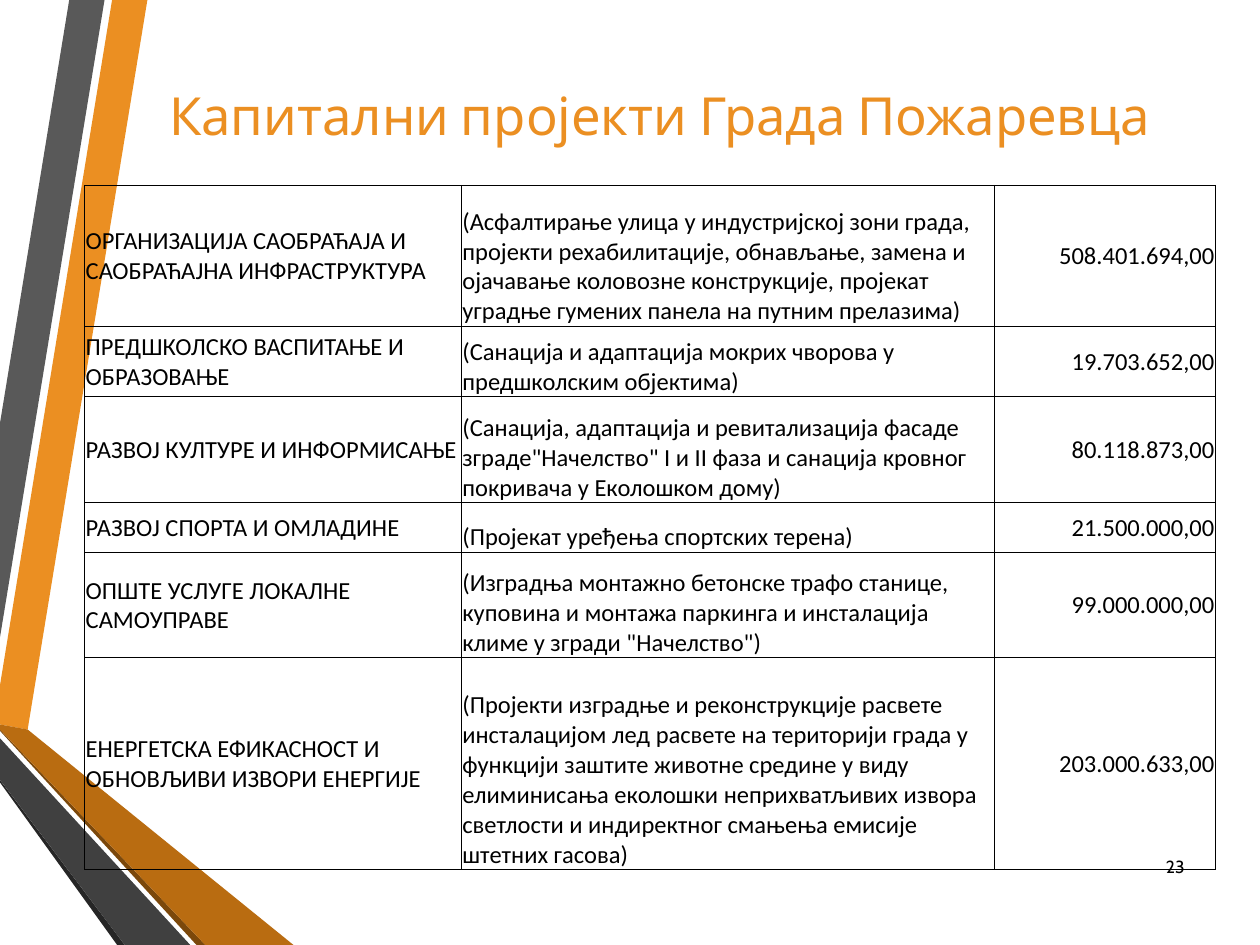
from lxml.etree import SubElement
from pptx import Presentation
from pptx.dml.color import RGBColor
from pptx.enum.text import MSO_ANCHOR as Anchor, PP_ALIGN as Align
from pptx.oxml import parse_xml
from pptx.oxml.ns import nsdecls, qn
from pptx.util import Inches, Pt

ORANGE = RGBColor(0xEB, 0x8F, 0x22)
DARK_ORANGE = RGBColor(0xB9, 0x6C, 0x11)
BROWN = RGBColor(0x7B, 0x48, 0x0B)
GREY = RGBColor(0x59, 0x59, 0x59)
DARK_GREY = RGBColor(0x40, 0x40, 0x40)
NEAR_BLACK = RGBColor(0x26, 0x26, 0x26)
BLACK = RGBColor(0, 0, 0)

deck = Presentation()
deck.slide_width, deck.slide_height = Inches(10), Inches(7.5)
COL, ROW = deck.slide_width / 100, deck.slide_height / 75
slide = deck.slides.add_slide(deck.slide_layouts[6])


def box(left, top, width, height):
    """Turn grid columns and rows into a position and size."""
    return [round(n * unit) for n, unit in
            ((left, COL), (top, ROW), (width, COL), (height, ROW))]


def write(frame, text, align, anchor, font, size, color):
    frame.word_wrap = True
    frame.vertical_anchor = anchor
    paragraph = frame.paragraphs[0]
    paragraph.alignment = align
    run = paragraph.add_run()
    run.text = text
    run.font.name, run.font.size = font, Pt(size)
    run.font.color.rgb = color


# Ribbons along the left edge, as (column, row) corners
ribbons = [
    (ORANGE, [(0, 54.4), (0, 57.5), (2.2, 57.9), (11.7, 0), (8.9, 0)]),
    (GREY, [(8.3, 0), (5.5, 0), (0, 33.6), (0, 50.6)]),
    (NEAR_BLACK, [(0, 61.9), (0, 62.1), (9.3, 75), (9.9, 75)]),
    (BROWN, [(0, 57.9), (0, 58), (15.6, 75), (16.3, 75)]),
    (DARK_ORANGE, [(0, 57.9), (16.3, 75), (23.3, 75), (2.2, 57.9), (0, 57.5)]),
    (DARK_GREY, [(0, 61.9), (9.9, 75), (15.1, 75), (0, 58.6)]),
]
for color, corners in ribbons:
    points = [(x * COL, y * ROW) for x, y in corners]
    outline = slide.shapes.build_freeform(*points[0])
    outline.add_line_segments(points[1:], close=True)
    ribbon = outline.convert_to_shape()
    ribbon.shadow.inherit = False
    ribbon.fill.solid()
    ribbon.fill.fore_color.rgb = color
    ribbon.line.fill.background()

title = slide.shapes.add_textbox(*box(10.7, 5, 84.3, 8.1))
write(title.text_frame, "Капитални пројекти Града Пожаревца ",
      Align.CENTER, Anchor.MIDDLE, "Cabin", 30, ORANGE)

# Each project: height in text lines, programme, description, amount
LINE = 2.8 * ROW
projects = [
    (4, "ОРГАНИЗАЦИЈА САОБРАЋАЈА И САОБРАЋАЈНА ИНФРАСТРУКТУРА",
     "(Асфалтирање улица у индустријској зони града, пројекти рехабилитације, "
     "обнављање, замена и ојачавање коловозне конструкције, пројекат уградње "
     "гумених панела на путним прелазима)", "508.401.694,00"),
    (2, "ПРЕДШКОЛСКО ВАСПИТАЊЕ И ОБРАЗОВАЊЕ",
     "(Санација и адаптација мокрих чворова у предшколским објектима)",
     "19.703.652,00"),
    (3, "РАЗВОЈ КУЛТУРЕ И ИНФОРМИСАЊЕ",
     "(Санација, адаптација и ревитализација фасаде зграде\"Начелство\" I и II "
     "фаза и санација кровног покривача у Еколошком дому)", "80.118.873,00"),
    (1.4, "РАЗВОЈ СПОРТА И ОМЛАДИНЕ",
     "(Пројекат уређења спортских терена)", "21.500.000,00"),
    (3, "ОПШТЕ УСЛУГЕ ЛОКАЛНЕ САМОУПРАВЕ",
     "(Изградња монтажно бетонске трафо станице, куповина и монтажа паркинга и "
     "инсталација климе у згради \"Начелство\")", "99.000.000,00"),
    (6, "ЕНЕРГЕТСКА ЕФИКАСНОСТ И ОБНОВЉИВИ ИЗВОРИ ЕНЕРГИЈЕ",
     "(Пројекти изградње и реконструкције расвете инсталацијом лед расвете на "
     "територији града у функцији заштите животне средине у виду елиминисања "
     "еколошки неприхватљивих извора светлости и индиректног смањења емисије "
     "штетних гасова)", "203.000.633,00"),
]
columns = [(29.9, Align.LEFT, Anchor.MIDDLE),
           (42.3, Align.LEFT, Anchor.BOTTOM),
           (17.6, Align.RIGHT, Anchor.MIDDLE)]
cell_margins = {"margin_left": Inches(0.01), "margin_right": Inches(0.01),
                "margin_top": Inches(0.01), "margin_bottom": 0}

table = slide.shapes.add_table(len(projects), len(columns),
                               *box(6.7, 14.7, 89.8, 54.3)).table
table.first_row = table.horz_banding = False
for column, (width, _, _) in zip(table.columns, columns):
    column.width = round(width * COL)

for r, (lines, *texts) in enumerate(projects):
    table.rows[r].height = round(lines * LINE)
    for c, (text, (_, align, anchor)) in enumerate(zip(texts, columns)):
        cell = table.cell(r, c)
        cell.fill.background()
        for margin, value in cell_margins.items():
            setattr(cell, margin, value)
        write(cell.text_frame, text, align, anchor, "Calibri", 14, BLACK)
        cell.vertical_anchor = anchor
        properties = cell._tc.get_or_add_tcPr()
        for place, side in enumerate(("lnL", "lnR", "lnT", "lnB")):
            border = parse_xml(f'<a:{side} {nsdecls("a")} w="{Pt(0.5)}"/>')
            paint = SubElement(border, qn("a:solidFill"))
            SubElement(paint, qn("a:srgbClr"), val=str(BLACK))
            properties.insert(place, border)

page_number = slide.shapes.add_textbox(*box(90.3, 66.8, 4.7, 4))
write(page_number.text_frame, "23", Align.RIGHT, Anchor.MIDDLE, "Cabin", 10, BLACK)

deck.save("out.pptx")
